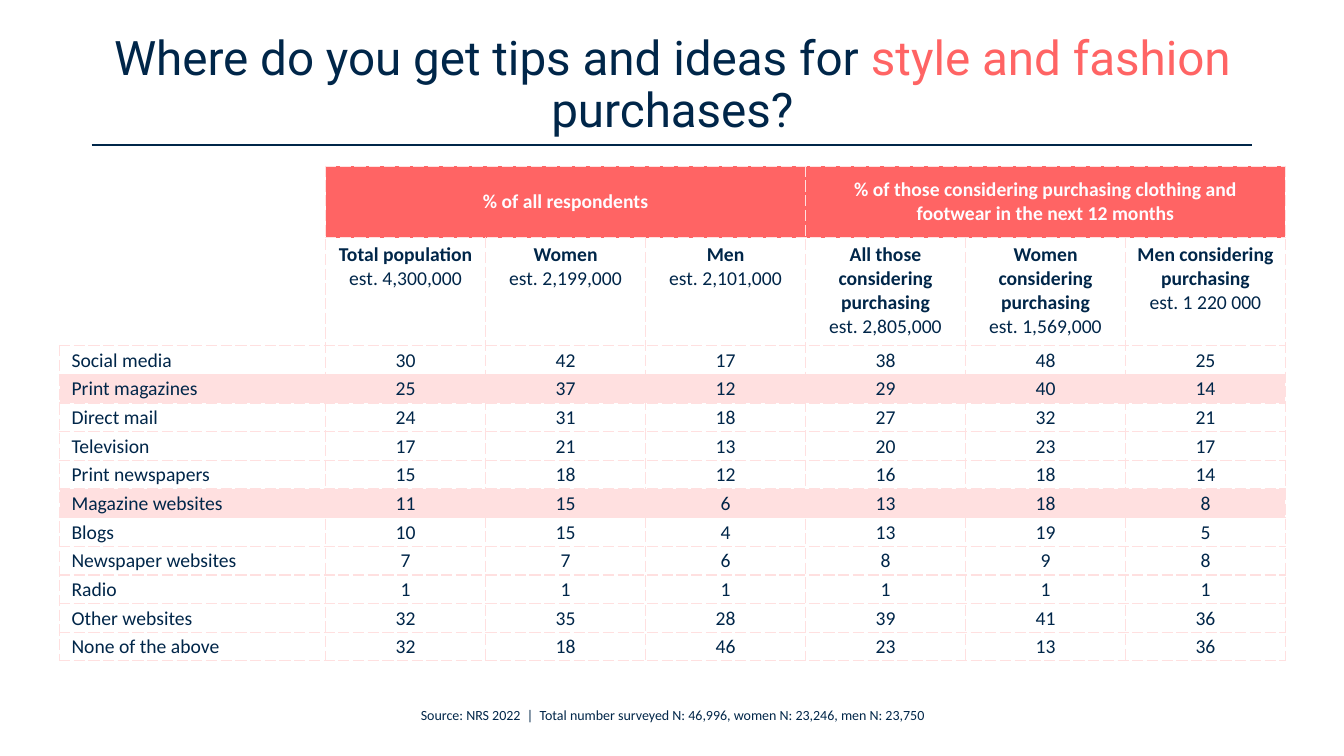
from lxml.etree import SubElement
from pptx import Presentation
from pptx.dml.color import RGBColor
from pptx.enum.shapes import MSO_CONNECTOR as Connector
from pptx.enum.text import MSO_ANCHOR as Anchor, MSO_AUTO_SIZE as AutoSize, PP_ALIGN as Align
from pptx.oxml import parse_xml
from pptx.oxml.ns import nsdecls, qn
from pptx.util import Inches, Pt

COLORS = {"navy": "002649", "coral": "FF6464", "pink": "FFE0E0", "white": "FFFFFF", "cream": "FEFCFF"}

TITLE = [("Where do you get tips and ideas for ", "navy"), ("style and fashion ", "coral"), ("purchases?", "navy")]
GROUPS = [
    "% of all respondents",
    "% of those considering purchasing clothing and footwear in the next 12 months",
]
AUDIENCES = [
    ("Total population", "est. 4,300,000"),
    ("Women", "est. 2,199,000"),
    ("Men", "est. 2,101,000"),
    ("All those considering purchasing", "est. 2,805,000"),
    ("Women considering purchasing", "est. 1,569,000"),
    ("Men considering purchasing", "est. 1 220 000"),
]
SOURCES = [
    ("Social media", 30, 42, 17, 38, 48, 25),
    ("Print magazines", 25, 37, 12, 29, 40, 14),
    ("Direct mail", 24, 31, 18, 27, 32, 21),
    ("Television", 17, 21, 13, 20, 23, 17),
    ("Print newspapers", 15, 18, 12, 16, 18, 14),
    ("Magazine websites", 11, 15, 6, 13, 18, 8),
    ("Blogs", 10, 15, 4, 13, 19, 5),
    ("Newspaper websites", 7, 7, 6, 8, 9, 8),
    ("Radio", 1, 1, 1, 1, 1, 1),
    ("Other websites", 32, 35, 28, 39, 41, 36),
    ("None of the above", 32, 18, 46, 23, 13, 36),
]
HIGHLIGHTED = {"Print magazines", "Magazine websites"}
FOOTNOTE = "Source: NRS 2022  |  Total number surveyed N: 46,996, women N: 23,246, men N: 23,750"


def color(name):
    """Return the named palette colour."""
    return RGBColor.from_string(COLORS[name])


class SurveyPage:
    """Hold the style and the current slide, and draw its elements."""

    title_font = "Roboto"
    body_font = "Calibri"

    def __init__(self, deck):
        """Add a title-only slide to the deck."""
        self.page = deck.slides.add_slide(deck.slide_layouts[5])

    def style(self, para, size, ink="navy", bold=False, align=Align.CENTER):
        """Set the alignment and body font of a paragraph."""
        para.alignment = align
        para.font.name = self.body_font
        para.font.size = Pt(size)
        para.font.bold = bold
        para.font.color.rgb = color(ink)

    def title(self, spans):
        """Fill the title placeholder with coloured spans."""
        box = self.page.shapes.title
        box.left, box.top, box.width, box.height = map(Inches, (0.92, 0.32, 11.5, 1.07))
        frame = box.text_frame
        frame.auto_size = AutoSize.NONE
        frame.word_wrap = True
        frame.vertical_anchor = Anchor.MIDDLE
        para = frame.paragraphs[0]
        para.alignment = Align.CENTER
        para.line_spacing = 0.9
        para.font.name = self.title_font
        para.font.size = Pt(34)
        for text, ink in spans:
            span = para.add_run()
            span.text = text
            span.font.color.rgb = color(ink)

    def rule(self, left, right, top):
        """Draw a thin horizontal line."""
        line = self.page.shapes.add_connector(
            Connector.STRAIGHT, Inches(left), Inches(top), Inches(right), Inches(top))
        line.line.color.rgb = color("navy")
        line.line.width = Pt(1)
        SubElement(line._element.spPr, qn("a:effectLst"))

    def footnote(self, text):
        """Write the centred source line."""
        box = self.page.shapes.add_textbox(*map(Inches, (3.82, 6.96, 5.7, 0.27)))
        box.text_frame.word_wrap = False
        box.text_frame.auto_size = AutoSize.SHAPE_TO_FIT_TEXT
        para = box.text_frame.paragraphs[0]
        para.text = text
        self.style(para, 10)

    def cell(self, cell, fill="white", sides="LRTB"):
        """Fill a cell and give the chosen sides a dashed border."""
        cell.fill.solid()
        cell.fill.fore_color.rgb = color(fill)
        properties = cell._tc.get_or_add_tcPr()
        for index, side in enumerate("LRTB"):
            paint = "<a:noFill/>"
            if side in sides:
                paint = (f'<a:solidFill><a:srgbClr val="{COLORS["pink"]}"/></a:solidFill>'
                         '<a:prstDash val="sysDash"/>')
            border = parse_xml(f'<a:ln{side} {nsdecls("a")} w="{Pt(1)}">{paint}</a:ln{side}>')
            properties.insert(index, border)

    def table(self, groups, audiences, sources):
        """Draw the survey table with its two header rows."""
        frame = self.page.shapes.add_table(
            len(sources) + 2, len(audiences) + 1, *map(Inches, (0.59, 1.65, 12.16, 4.91)))
        table = frame.table
        table.first_row = table.horz_banding = False
        for index, column in enumerate(table.columns):
            column.width = Inches(1.587 if index else 2.64)
        for index, row in enumerate(table.rows):
            row.height = Inches((0.71, 1.07)[index] if index < 2 else 3.13 / len(sources))

        for row in range(2):
            self.cell(table.cell(row, 0), sides="RB" if row else "R")
        table.cell(0, 0).merge(table.cell(1, 0))
        self.group_row(table, groups, len(audiences) // len(groups))
        for column, (name, estimate) in enumerate(audiences, 1):
            self.audience(table.cell(1, column), name, estimate)
        for row, values in enumerate(sources, 2):
            for column, value in enumerate(values):
                self.value(table.cell(row, column), value, values[0] in HIGHLIGHTED, column == 0)

    def group_row(self, table, groups, width):
        """Write the merged coral headers, each spanning width columns."""
        for index, text in enumerate(groups):
            first = 1 + index * width
            for column in range(first, first + width):
                self.cell(table.cell(0, column), "coral")
            head = table.cell(0, first)
            head.merge(table.cell(0, first + width - 1))
            head.vertical_anchor = Anchor.MIDDLE
            para = head.text_frame.paragraphs[0]
            para.text = text
            self.style(para, 14, "cream", bold=True)

    def audience(self, cell, name, estimate):
        """Write a bold audience name above its estimated size."""
        self.cell(cell)
        para = cell.text_frame.paragraphs[0]
        self.style(para, 14)
        span = para.add_run()
        span.text = name
        span.font.bold = True
        para.add_line_break()
        para.add_run().text = estimate

    def value(self, cell, value, highlighted, is_label):
        """Write one label or number of the table body."""
        self.cell(cell, "pink" if highlighted else "white")
        cell.vertical_anchor = Anchor.MIDDLE
        cell.margin_left = Inches(0.12 if is_label else 0.01)
        cell.margin_right = cell.margin_top = Inches(0.01)
        cell.margin_bottom = 0
        para = cell.text_frame.paragraphs[0]
        para.text = str(value)
        self.style(para, 14, align=Align.LEFT if is_label else Align.CENTER)


def main():
    """Build and save the deck."""
    deck = Presentation()
    deck.slide_width, deck.slide_height = Inches(13.33), Inches(7.5)
    survey = SurveyPage(deck)
    survey.title(TITLE)
    survey.table(GROUPS, AUDIENCES, SOURCES)
    survey.rule(0.91, 12.42, 1.44)
    survey.footnote(FOOTNOTE)
    deck.save("out.pptx")


if __name__ == "__main__":
    main()
